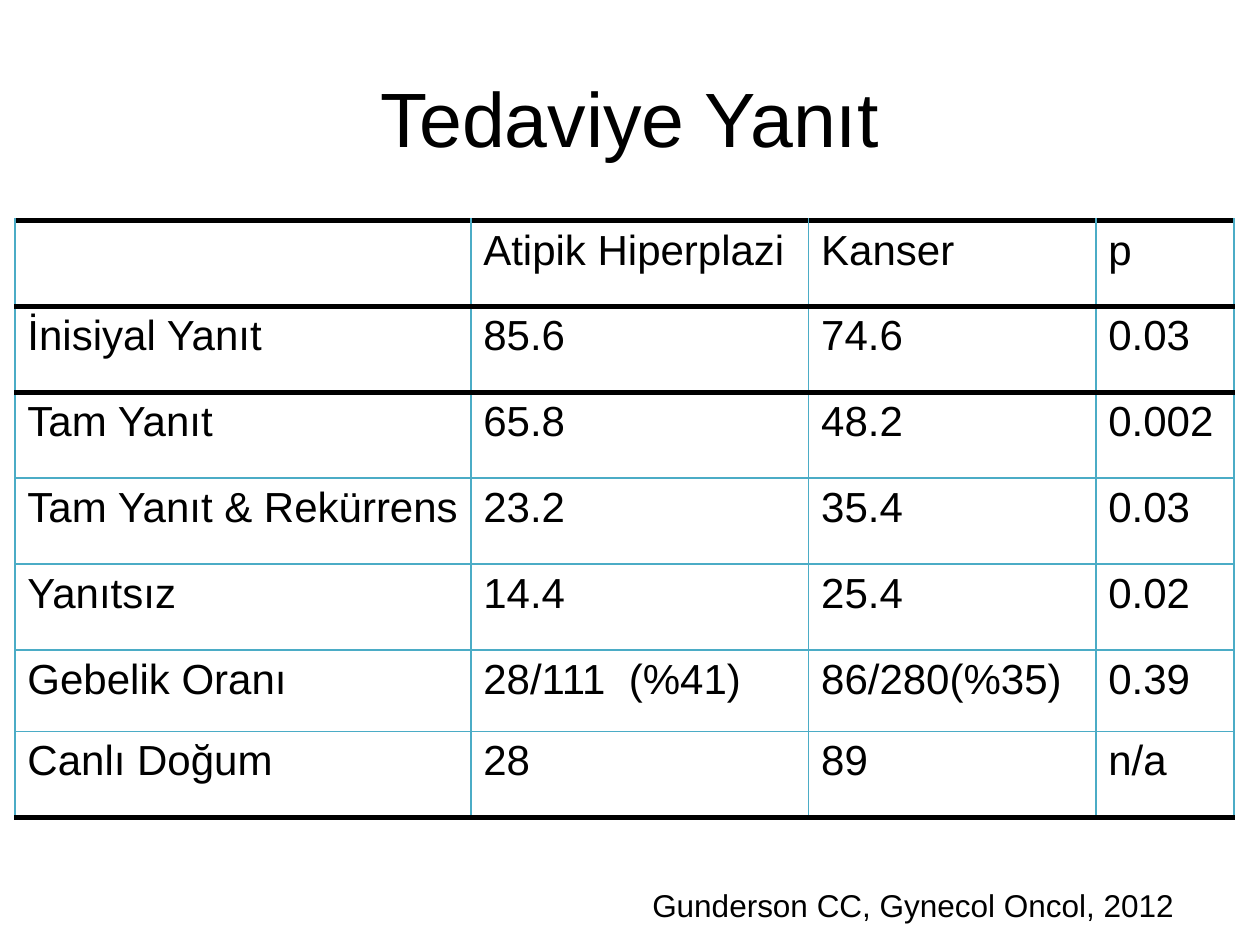
from lxml import etree
from pptx import Presentation
from pptx.dml.color import RGBColor
from pptx.enum.text import MSO_ANCHOR, PP_ALIGN
from pptx.oxml.ns import qn
from pptx.util import Cm, Pt

TITLE = "Tedaviye Yanıt"
ROWS = [
    ("", "Atipik Hiperplazi", "Kanser", "p"),
    ("İnisiyal Yanıt", "85.6", "74.6", "0.03"),
    ("Tam Yanıt", "65.8", "48.2", "0.002"),
    ("Tam Yanıt & Rekürrens", "23.2", "35.4", "0.03"),
    ("Yanıtsız", "14.4", "25.4", "0.02"),
    ("Gebelik Oranı", "28/111  (%41)", "86/280(%35)", "0.39"),
    ("Canlı Doğum", "28", "89", "n/a"),
]
CITATION = "Gunderson CC, Gynecol Oncol, 2012"

BLACK = RGBColor(0x00, 0x00, 0x00)
TEAL = RGBColor(0x4B, 0xAC, 0xC6)
CENTER, MIDDLE = PP_ALIGN.CENTER, MSO_ANCHOR.MIDDLE
TITLE_ONLY = 5

COL_WIDTHS = [9.19, 6.81, 5.79, 2.79]
ROW_HEIGHTS = [1.73] * 5 + [1.65, 1.73]
HEAVY_RULES = {0, 1, 2, len(ROWS)}  # horizontal rules, counted from the top
HEAVY, THIN = (BLACK, Pt(3)), (TEAL, Pt(1))


def write(tf, text, size):
    r = tf.paragraphs[0].add_run()
    r.text = text
    font = {"name": "Arial", "size": Pt(size), "bold": False}
    for key, value in font.items():
        setattr(r.font, key, value)
    r.font.color.rgb = BLACK


def set_border(cell, side, color, width):
    tc_pr = cell._tc.get_or_add_tcPr()
    ln = etree.SubElement(tc_pr, qn(f"a:ln{side}"), w=str(width))
    fill = etree.SubElement(ln, qn("a:solidFill"))
    etree.SubElement(fill, qn("a:srgbClr"), val=str(color))


def horizontal_rule(index):
    return HEAVY if index in HEAVY_RULES else THIN


def add_title(slide):
    sp = slide.shapes.title
    sp.left, sp.top, sp.width, sp.height = Cm(1.27), Cm(0.76), Cm(22.86), Cm(3.18)
    tf = sp.text_frame
    tf.vertical_anchor = MIDDLE
    write(tf, TITLE, 44)
    tf.paragraphs[0].alignment = CENTER


def add_results_table(slide):
    frame = slide.shapes.add_table(
        len(ROWS), len(COL_WIDTHS), Cm(0.3), Cm(4.45),
        Cm(sum(COL_WIDTHS)), Cm(sum(ROW_HEIGHTS)))
    table = frame.table
    table.first_row = table.horz_banding = False
    for column, width in zip(table.columns, COL_WIDTHS):
        column.width = Cm(width)
    for i, (row, height) in enumerate(zip(table.rows, ROW_HEIGHTS)):
        row.height = Cm(height)
        borders = {"L": THIN, "R": THIN,
                   "T": horizontal_rule(i), "B": horizontal_rule(i + 1)}
        for cell, text in zip(row.cells, ROWS[i]):
            for side, line in borders.items():
                set_border(cell, side, *line)
            cell.fill.background()
            if text:
                write(cell.text_frame, text, 24)


def add_citation(slide):
    sp = slide.shapes.add_textbox(Cm(12.9), Cm(17.73), Cm(11.13), Cm(1.02))
    sp.text_frame.word_wrap = False
    write(sp.text_frame, CITATION, 18)


def main():
    prs = Presentation()
    prs.slide_width, prs.slide_height = Cm(25.4), Cm(19.05)
    slide = prs.slides.add_slide(prs.slide_layouts[TITLE_ONLY])
    add_title(slide)
    add_results_table(slide)
    add_citation(slide)
    prs.save("out.pptx")


if __name__ == "__main__":
    main()
